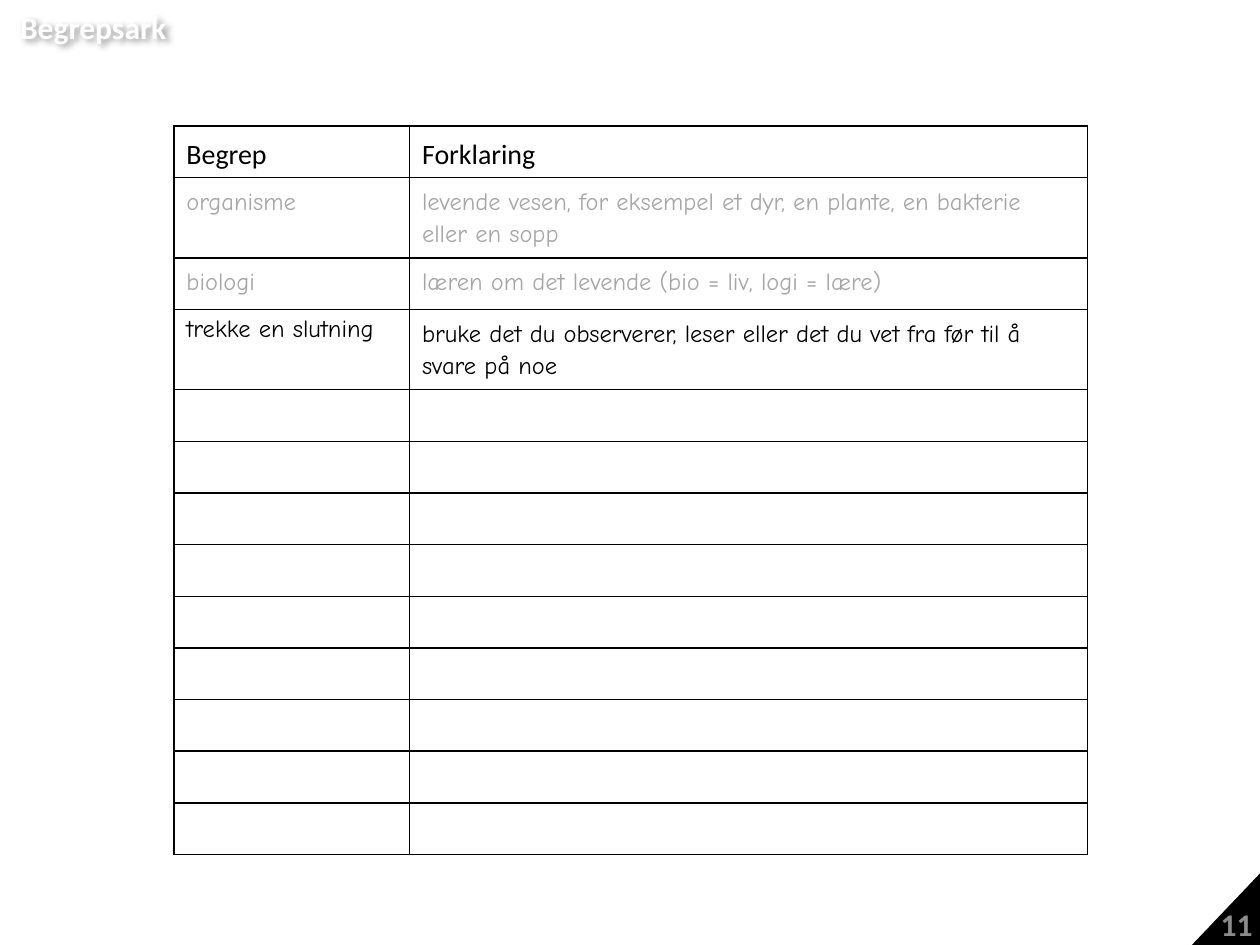
from typing import NamedTuple

from lxml import etree
from pptx import Presentation
from pptx.dml.color import RGBColor
from pptx.enum import text
from pptx.oxml import parse_xml
from pptx.oxml.ns import nsdecls, qn
from pptx.util import Inches, Pt

BLACK = RGBColor(0x00, 0x00, 0x00)
WHITE = RGBColor(0xFF, 0xFF, 0xFF)
GREY = RGBColor(0xA6, 0xA6, 0xA6)
NUMBER_GREY = RGBColor(0x8C, 0x8C, 0x8C)

HEADING_FONT = "Calibri"
BODY_FONT = "Comic Neue"
ROW_COUNT = 13
ROW_HEIGHT = 0.41
COLUMN_WIDTHS = (1.87, 5.38)


class Entry(NamedTuple):
    term: str
    explanation: str
    color: RGBColor = BLACK
    font: str = BODY_FONT
    size: int = 14
    term_spacing: float = 1.15


ENTRIES = [
    Entry("Begrep", "Forklaring", font=HEADING_FONT, size=16),
    Entry("organisme",
          "levende vesen, for eksempel et dyr, en plante, en bakterie eller en sopp",
          GREY),
    Entry("biologi", "læren om det levende (bio = liv, logi = lære)", GREY),
    Entry("trekke en slutning",
          "bruke det du observerer, leser eller det du vet fra før til å svare på noe",
          term_spacing=1.0),
]


def set_font(p, name: str, size: int, color: RGBColor, bold: bool = False) -> None:
    p.font.name = name
    p.font.size = Pt(size)
    p.font.bold = bold
    p.font.color.rgb = color


def add_borders(cell) -> None:
    tc_pr = cell._tc.get_or_add_tcPr()
    for i, side in enumerate(("lnL", "lnR", "lnT", "lnB")):
        ln = etree.Element(qn(f"a:{side}"), w=str(Pt(1)))
        fill = etree.SubElement(ln, qn("a:solidFill"))
        etree.SubElement(fill, qn("a:srgbClr"), val=str(BLACK))
        tc_pr.insert(i, ln)


def fill_cell(cell, words: str, entry: Entry, spacing: float) -> None:
    p = cell.text_frame.paragraphs[0]
    p.text = words
    p.line_spacing = spacing
    set_font(p, entry.font, entry.size, entry.color)


def add_glossary(slide) -> None:
    table = slide.shapes.add_table(
        ROW_COUNT, len(COLUMN_WIDTHS), Inches(1.38), Inches(1),
        Inches(sum(COLUMN_WIDTHS)), Inches(ROW_COUNT * ROW_HEIGHT)).table
    table.first_row = table.horz_banding = False
    for column, width in zip(table.columns, COLUMN_WIDTHS):
        column.width = Inches(width)
    for row in table.rows:
        row.height = Inches(ROW_HEIGHT)
    for cell in table.iter_cells():
        cell.fill.background()
        add_borders(cell)
    for i, entry in enumerate(ENTRIES):
        fill_cell(table.cell(i, 0), entry.term, entry, entry.term_spacing)
        fill_cell(table.cell(i, 1), entry.explanation, entry, 1.15)
    for cell in table.rows[0].cells:
        cell.vertical_anchor = text.MSO_ANCHOR.MIDDLE


def add_page_corner(slide, number: str) -> None:
    left, top, right, bottom = (Inches(v) for v in (9.45, 6.91, 10.04, 7.53))
    builder = slide.shapes.build_freeform(left, bottom)
    builder.add_line_segments([(right, top), (right, bottom)], close=True)
    sp = builder.convert_to_shape()
    sp.shadow.inherit = False
    sp.fill.solid()
    sp.fill.fore_color.rgb = BLACK
    sp.line.color.rgb = BLACK
    sp.line.width = Pt(2)
    tf = sp.text_frame
    tf.vertical_anchor = text.MSO_ANCHOR.BOTTOM
    p = tf.paragraphs[0]
    p.text = number
    p.alignment = text.PP_ALIGN.RIGHT
    set_font(p, HEADING_FONT, 18, NUMBER_GREY, bold=True)


def set_title(slide, words: str) -> None:
    """Place the white title, which stands out only by its soft shadow."""
    sp = slide.shapes.title
    sp.left, sp.top = Inches(0.06), Inches(0.01)
    sp.width, sp.height = Inches(1.37), Inches(0.4)
    tf = sp.text_frame
    tf.word_wrap = False
    tf.auto_size = text.MSO_AUTO_SIZE.SHAPE_TO_FIT_TEXT
    tf.vertical_anchor = text.MSO_ANCHOR.TOP
    p = tf.paragraphs[0]
    p.text = words
    p.alignment = text.PP_ALIGN.LEFT
    set_font(p, HEADING_FONT, 18, WHITE, bold=True)
    sp._element.spPr.append(parse_xml(
        f'<a:effectLst {nsdecls("a")}>'
        f'<a:outerShdw blurRad="{Pt(4)}" dist="{Pt(3)}" dir="2700000" algn="tl">'
        f'<a:srgbClr val="{BLACK}"><a:alpha val="40000"/></a:srgbClr>'
        '</a:outerShdw></a:effectLst>'))


def main() -> None:
    prs = Presentation()
    prs.slide_width, prs.slide_height = Inches(10), Inches(7.5)
    slide = prs.slides.add_slide(prs.slide_layouts[5])
    add_page_corner(slide, "11")
    add_glossary(slide)
    set_title(slide, "Begrepsark")
    prs.save("out.pptx")


if __name__ == "__main__":
    main()
